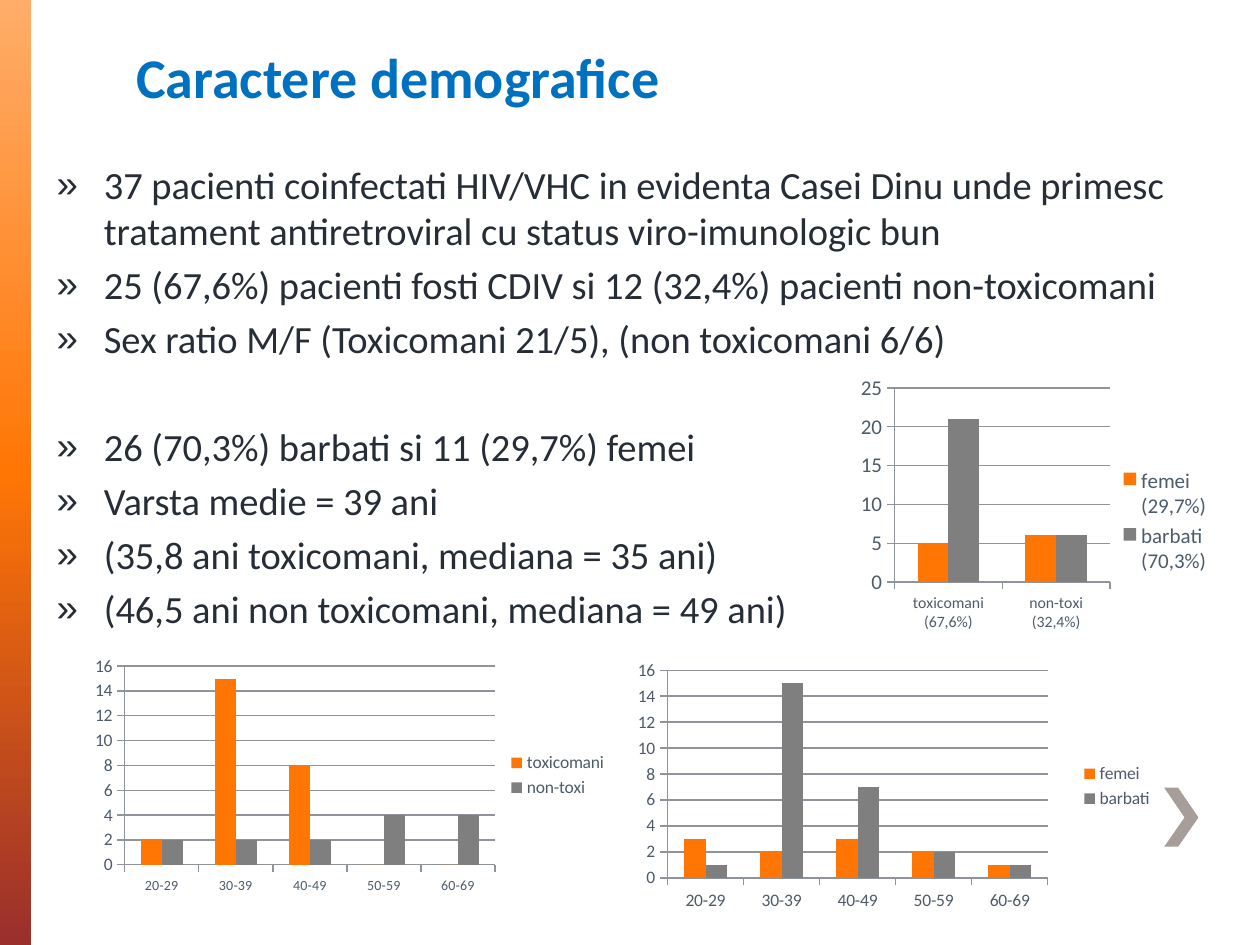
from copy import deepcopy

from lxml import etree
from pptx import Presentation
from pptx.chart.data import CategoryChartData
from pptx.dml.color import RGBColor
from pptx.enum.chart import XL_CHART_TYPE, XL_LEGEND_POSITION, XL_TICK_MARK
from pptx.enum.shapes import MSO_SHAPE
from pptx.enum.text import MSO_ANCHOR, MSO_AUTO_SIZE, PP_ALIGN
from pptx.oxml.ns import qn
from pptx.util import Cm, Pt

COLUMNS = XL_CHART_TYPE.COLUMN_CLUSTERED
LEGEND_RIGHT = XL_LEGEND_POSITION.RIGHT
TICK_OUTSIDE = XL_TICK_MARK.OUTSIDE
TICK_NONE = XL_TICK_MARK.NONE
RECTANGLE = MSO_SHAPE.RECTANGLE
BOTTOM, TOP = MSO_ANCHOR.BOTTOM, MSO_ANCHOR.TOP
NO_AUTOFIT = MSO_AUTO_SIZE.NONE
LEFT = PP_ALIGN.LEFT

BLUE = RGBColor(0x00, 0x70, 0xC0)
INK = RGBColor(0x26, 0x2D, 0x36)
SLATE = RGBColor(0x4D, 0x5B, 0x6B)
PEACH = RGBColor(0xFF, 0xAD, 0x69)
ORANGE = RGBColor(0xFF, 0x76, 0x05)
BRICK = RGBColor(0x9A, 0x2F, 0x2C)
GRAY = RGBColor(0x7F, 0x7F, 0x7F)
TAUPE = RGBColor(0xA7, 0x9D, 0x99)
AXIS_GRAY = RGBColor(0x8E, 0x94, 0x9A)
FONT = "Calibri"


def place(shape, left, top, width, height):
    shape.left, shape.top = Cm(left), Cm(top)
    shape.width, shape.height = Cm(width), Cm(height)


def pin(chart_part, position, fractions, target=()):
    """Give a plot area or legend fixed x, y, w, h fractions of its chart."""
    for old_layout in chart_part.findall(qn("c:layout")):
        chart_part.remove(old_layout)
    layout = etree.Element(qn("c:layout"))
    manual = etree.SubElement(layout, qn("c:manualLayout"))
    settings = [*target, ("xMode", "edge"), ("yMode", "edge")]
    settings += zip("xywh", fractions)
    for tag, value in settings:
        etree.SubElement(manual, qn(f"c:{tag}")).set("val", str(value))
    chart_part.insert(position, layout)


prs = Presentation()
prs.slide_width, prs.slide_height = Cm(25.4), Cm(19.05)
slide = prs.slides.add_slide(prs.slide_layouts[1])
title, body = slide.placeholders

# Side bar and chevron, behind the text
side_bar = slide.shapes.add_shape(RECTANGLE, 0, 0, Cm(0.63), prs.slide_height)
side_bar.fill.gradient()
side_bar.fill.gradient_angle = 270
stop_list = side_bar._element.spPr.find(qn("a:gradFill")).find(qn("a:gsLst"))
stop_list.append(deepcopy(stop_list[-1]))
for stop, position, color in zip(side_bar.fill.gradient_stops,
                                 (0, 0.5, 1), (PEACH, ORANGE, BRICK)):
    stop.position = position
    stop.color.rgb = color

outline = [(23.75, 15.88), (23.47, 15.88), (23.88, 16.48), (23.47, 17.07),
           (23.75, 17.07), (24.16, 16.48)]
points = [(Cm(x), Cm(y)) for x, y in outline]
builder = slide.shapes.build_freeform(*points[0])
builder.add_line_segments(points[1:], close=True)
chevron = builder.convert_to_shape()
chevron.fill.solid()
chevron.fill.fore_color.rgb = TAUPE

for decoration in (side_bar, chevron):
    decoration.line.fill.background()
    decoration.shadow.inherit = False
    title._element.addprevious(decoration._element)

# Title
place(title, 2.49, 0.53, 20.9, 1.8)
title.text_frame.text = "Caractere demografice"
title.text_frame.vertical_anchor = BOTTOM
title.text_frame.auto_size = NO_AUTOFIT
heading = title.text_frame.paragraphs[0]
heading.alignment = LEFT
heading.font.name, heading.font.size = FONT, Pt(32)
heading.font.bold = True
heading.font.color.rgb = BLUE

# Findings, in two groups set apart by one line
finding_groups = [
    ["37 pacienti coinfectati HIV/VHC in evidenta Casei Dinu unde primesc "
     "tratament antiretroviral cu status viro-imunologic bun",
     "25 (67,6%) pacienti fosti CDIV si 12 (32,4%) pacienti non-toxicomani",
     "Sex ratio M/F (Toxicomani 21/5), (non toxicomani 6/6)"],
    ["26 (70,3%) barbati si 11 (29,7%) femei",
     "Varsta medie = 39 ani",
     "(35,8 ani toxicomani, mediana = 35 ani)",
     "(46,5 ani non toxicomani, mediana = 49 ani)"],
]
place(body, 0.89, 3.12, 24, 15.6)
body.text_frame.vertical_anchor = TOP
body.text_frame.auto_size = NO_AUTOFIT
body.text_frame.text = "\n".join(sum(finding_groups, []))
for index, finding in enumerate(body.text_frame.paragraphs):
    starts_second_group = index == len(finding_groups[0])
    finding.space_before = Pt(35.6 if starts_second_group else 4.4)
    finding.font.name, finding.font.size = FONT, Pt(22)
    finding.font.color.rgb = INK
    properties = finding._p.get_or_add_pPr()
    properties.set("marL", str(Cm(0.95)))
    properties.set("indent", str(-Cm(0.95)))
    etree.SubElement(properties, qn("a:buChar")).set("char", "»")

# Charts: box, plot area, legend area, (category, value, legend) sizes,
# categories, series
ages = ["20-29", "30-39", "40-49", "50-59", "60-69"]
charts = [
    ((16.31, 7.32, 8.2, 5.59), (0.21, 0.09, 0.53, 0.7), (0.75, 0.36, 0.25, 0.42),
     (9, 12, 12), ["toxicomani\n(67,6%)", "non-toxi\n(32,4%)"],
     {"femei (29,7%)": (5, 6), "barbati (70,3%)": (21, 6)}),
    ((1.7, 13.13, 10.8, 5), None, None, (8, 10, 10), ages,
     {"toxicomani": (2, 15, 8, 0, 0), "non-toxi": (2, 2, 2, 4, 4)}),
    ((12.7, 13.13, 10.8, 5.44), (0.07, 0.07, 0.71, 0.77), None, (10, 10, 10), ages,
     {"femei": (3, 2, 3, 2, 1), "barbati": (1, 15, 7, 2, 1)}),
]
for box, plot_area, legend_area, sizes, categories, groups in charts:
    data = CategoryChartData()
    data.categories = categories
    for name, counts in groups.items():
        data.add_series(name, counts)
    chart = slide.shapes.add_chart(COLUMNS, *map(Cm, box), data).chart
    chart.has_title = False
    chart.font.name, chart.font.size = FONT, Pt(sizes[1])
    chart.font.color.rgb = SLATE
    chart.has_legend = True
    chart.legend.position = LEGEND_RIGHT
    chart.legend.include_in_layout = False
    for part, size in zip((chart.category_axis.tick_labels,
                           chart.value_axis.tick_labels, chart.legend), sizes):
        part.font.name, part.font.size = FONT, Pt(size)
        part.font.color.rgb = SLATE
    for axis in (chart.category_axis, chart.value_axis):
        axis.major_tick_mark, axis.minor_tick_mark = TICK_OUTSIDE, TICK_NONE
        axis.format.line.color.rgb = AXIS_GRAY
    chart.value_axis.has_major_gridlines = True
    chart.value_axis.major_gridlines.format.line.color.rgb = AXIS_GRAY
    columns = chart.plots[0]
    columns.gap_width = 150
    columns.vary_by_categories = False
    for series, color in zip(columns.series, (ORANGE, GRAY)):
        series.format.fill.solid()
        series.format.fill.fore_color.rgb = color
    chart_xml = chart._chartSpace.chart
    if plot_area:
        pin(chart_xml.plotArea, 0, plot_area, [("layoutTarget", "inner")])
    if legend_area:
        pin(chart_xml.find(qn("c:legend")), 1, legend_area)

prs.save("out.pptx")
